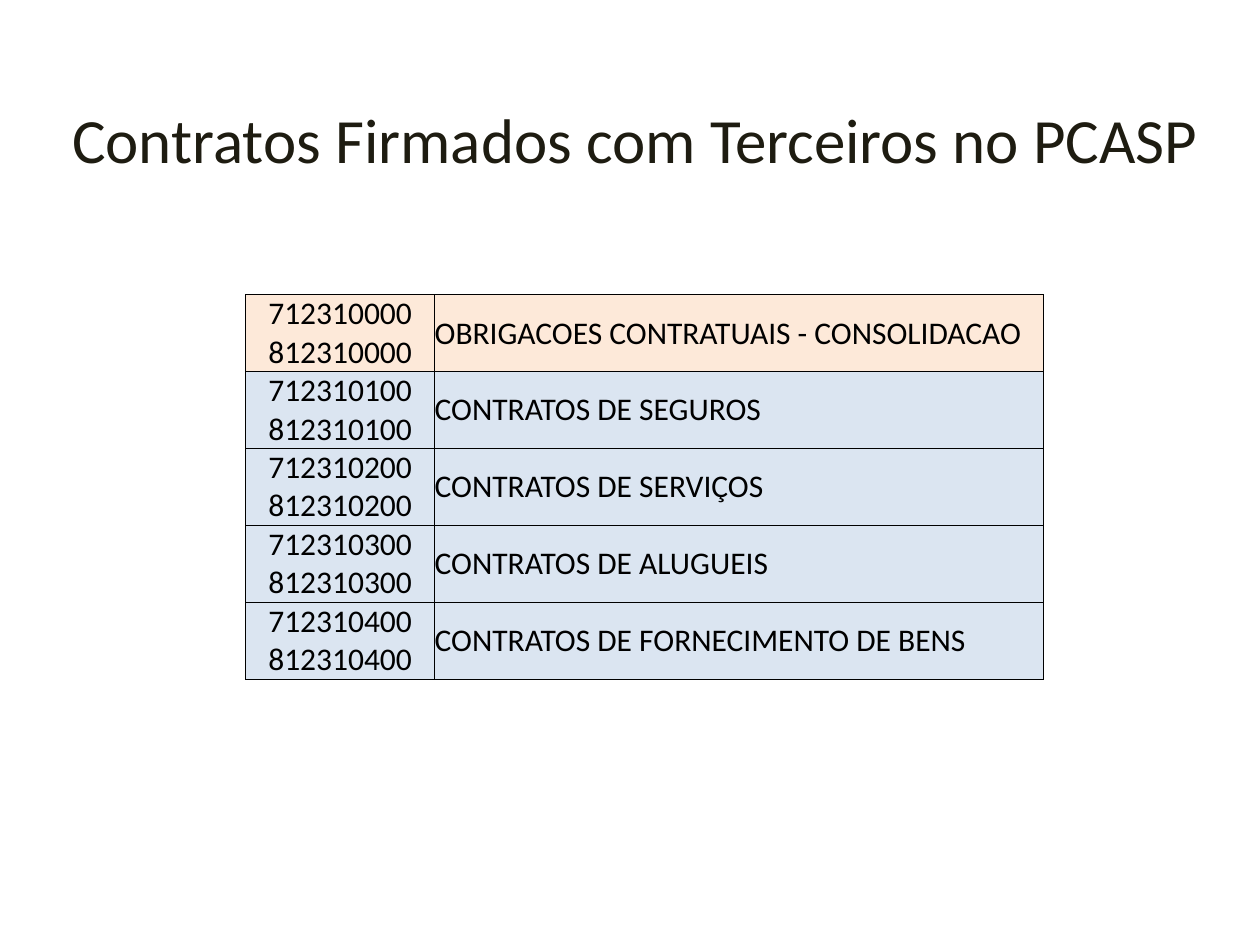
from dataclasses import dataclass
from typing import Any

from lxml import etree
from pptx import Presentation
from pptx import util as u
from pptx.dml import color
from pptx.enum import text
from pptx.oxml import ns

HEADER_FILL, ROW_FILL = "FDE9D9", "DBE5F1"
CONTRACTS = [
    ("712310000\n812310000", "OBRIGACOES CONTRATUAIS - CONSOLIDACAO", HEADER_FILL),
    ("712310100\n812310100", "CONTRATOS DE SEGUROS", ROW_FILL),
    ("712310200\n812310200", "CONTRATOS DE SERVIÇOS", ROW_FILL),
    ("712310300\n812310300", "CONTRATOS DE ALUGUEIS", ROW_FILL),
    ("712310400\n812310400", "CONTRATOS DE FORNECIMENTO DE BENS", ROW_FILL),
]


def rgb(value):
    return color.RGBColor.from_string(value)


@dataclass
class SlideBuilder:
    """Hold the style and the current slide, and add its elements."""

    slide: Any
    font: str = "Calibri"
    ink: str = "000000"
    border_width: float = 0.5

    def set_text(self, frame, content, size, ink, align):
        frame.text = content
        for para in frame.paragraphs:
            para.alignment = align
            for span in para.runs:
                span.font.name = self.font
                span.font.size = u.Pt(size)
                span.font.color.rgb = rgb(ink)

    def title(self, content, left, top, width, height):
        box = self.slide.shapes.add_textbox(*map(u.Inches, (left, top, width, height)))
        frame = box.text_frame
        frame.word_wrap = True
        frame.vertical_anchor = text.MSO_ANCHOR.MIDDLE
        self.set_text(frame, content, 36, "1E1C11", text.PP_ALIGN.CENTER)

    def borders(self, cell):
        properties = cell._tc.get_or_add_tcPr()
        for side in ("a:lnL", "a:lnR", "a:lnT", "a:lnB"):
            line = etree.SubElement(properties, ns.qn(side), w=str(u.Pt(self.border_width)))
            fill = etree.SubElement(line, ns.qn("a:solidFill"))
            etree.SubElement(fill, ns.qn("a:srgbClr"), val=self.ink)

    def cell(self, cell, content, fill, align):
        cell.margin_left = cell.margin_right = cell.margin_top = cell.margin_bottom = 0
        cell.vertical_anchor = text.MSO_ANCHOR.MIDDLE
        self.borders(cell)
        cell.fill.solid()
        cell.fill.fore_color.rgb = rgb(fill)
        self.set_text(cell.text_frame, content, 18, self.ink, align)

    def table(self, entries, left, top, widths, row_height):
        size = (left, top, sum(widths), row_height * len(entries))
        frame = self.slide.shapes.add_table(len(entries), len(widths), *map(u.Inches, size))
        table = frame.table
        table.first_row = table.horz_banding = False
        for column, width in zip(table.columns, widths):
            column.width = u.Inches(width)
        for row, (codes, name, fill) in zip(table.rows, entries):
            row.height = u.Inches(row_height)
            self.cell(row.cells[0], codes, fill, text.PP_ALIGN.CENTER)
            self.cell(row.cells[1], name, fill, text.PP_ALIGN.LEFT)


def main():
    deck = Presentation()
    deck.slide_width, deck.slide_height = u.Inches(10), u.Inches(7.5)
    page = SlideBuilder(deck.slides.add_slide(deck.slide_layouts[6]))
    page.title("Contratos Firmados com Terceiros no PCASP", 0.39, 0.47, 9.3, 1.25)
    page.table(CONTRACTS, 1.95, 2.34, (1.5, 4.83), 0.61)
    deck.save("out.pptx")


if __name__ == "__main__":
    main()
